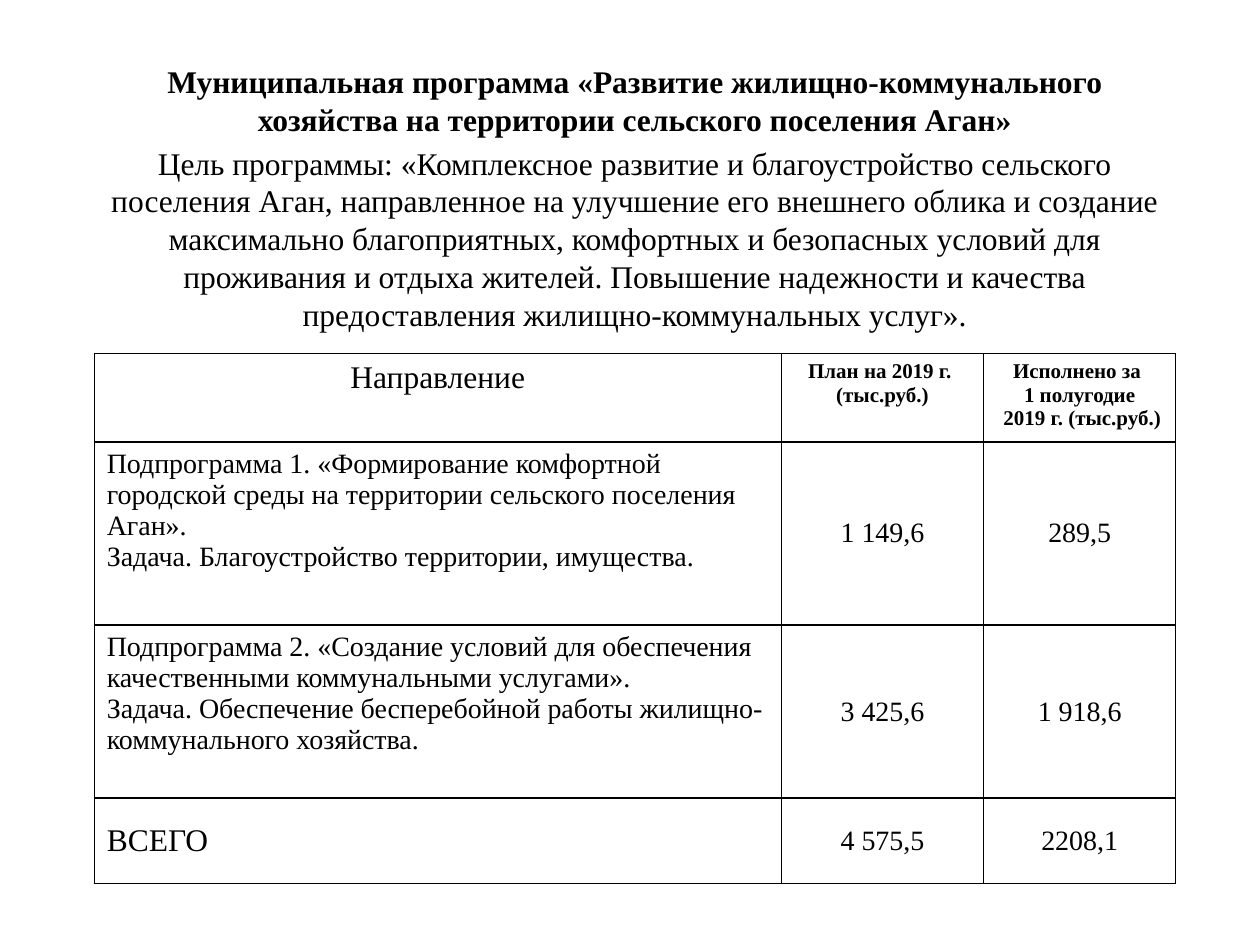
from lxml.etree import fromstring
from pptx import Presentation
from pptx.dml.color import RGBColor
from pptx.enum.text import MSO_ANCHOR, PP_ALIGN
from pptx.oxml.ns import nsdecls
from pptx.util import Cm, Pt

# Content
HEADING = ("Муниципальная программа «Развитие жилищно-коммунального "
           "хозяйства на территории сельского поселения Аган»")
GOAL = ("Цель программы: «Комплексное развитие и благоустройство сельского "
        "поселения Аган, направленное на улучшение его внешнего облика и создание "
        "максимально благоприятных, комфортных и безопасных условий для "
        "проживания и отдыха жителей. Повышение надежности и качества "
        "предоставления жилищно-коммунальных услуг».")
COLUMN_HEADS = [
    ["Направление"],
    ["План на 2019 г. ", "(тыс.руб.)"],
    ["Исполнено за ", "1 полугодие", " 2019 г. (тыс.руб.)"],
]
SUBPROGRAMMES = [
    (["Подпрограмма 1. «Формирование комфортной городской среды на территории "
      "сельского поселения Аган».",
      "Задача. Благоустройство территории, имущества."],
     ["1 149,6"], ["289,5"]),
    (["Подпрограмма 2. «Создание условий для обеспечения качественными "
      "коммунальными услугами».",
      "Задача. Обеспечение бесперебойной работы жилищно-коммунального хозяйства."],
     ["3 425,6"], ["1 918,6"]),
]
TOTAL = (["ВСЕГО"], ["4 575,5"], ["2208,1"])

THEME = {
    "font": "Times New Roman",
    "ink": "000000",
    "large": 18,
    "body": 16,
    "small": 12,
    "border": 1,
}

# Layout, in centimetres
LEFT, WIDTH = 1.9, 21.8
INTRO_TOP, INTRO_HEIGHT = 1.12, 6
TABLE_TOP = 7.13
COLUMN_WIDTHS = [13.85, 4.08, 3.87]
ROW_HEIGHTS = [1.72, 3.69, 3.49, 1.72]


def write(frame, lines, size, bold=False, align=PP_ALIGN.CENTER, before=0, more=False):
    """Write lines as paragraphs; more=True adds them after existing ones."""
    for i, line in enumerate(lines):
        paragraph = frame.add_paragraph() if more or i else frame.paragraphs[0]
        paragraph.alignment = align
        paragraph.space_before = Pt(before)
        run = paragraph.add_run()
        run.text = line
        run.font.name = THEME["font"]
        run.font.size = Pt(size)
        run.font.bold = bold
        run.font.color.rgb = RGBColor.from_string(THEME["ink"])


def outline(cell):
    """Clear the cell's fill and rule all four sides."""
    cell.fill.background()
    for position, side in enumerate("LRTB"):
        cell._tc.get_or_add_tcPr().insert(position, fromstring(
            f'<a:ln{side} {nsdecls("a")} w="{Pt(THEME["border"])}"><a:solidFill>'
            f'<a:srgbClr val="{THEME["ink"]}"/></a:solidFill></a:ln{side}>'))


def cell_format(row, column):
    """Type and alignment by the cell's role in the table."""
    header, label, total = row == 0, column == 0, row == len(ROW_HEIGHTS) - 1
    large = label and (header or total)
    small = header and not label
    return {
        "size": THEME["large" if large else "small" if small else "body"],
        "bold": small,
        "align": PP_ALIGN.LEFT if label and not header else PP_ALIGN.CENTER,
    }


def main():
    prs = Presentation()
    prs.slide_width, prs.slide_height = Cm(25.4), Cm(19.05)
    slide = prs.slides.add_slide(prs.slide_layouts[6])

    # Programme name and goal
    intro = slide.shapes.add_textbox(
        Cm(LEFT), Cm(INTRO_TOP), Cm(WIDTH), Cm(INTRO_HEIGHT)).text_frame
    intro.word_wrap = True
    gap = THEME["large"] * 0.2
    write(intro, [HEADING], THEME["large"], bold=True, before=gap)
    write(intro, [GOAL], THEME["large"], before=gap, more=True)

    # Plan and execution table
    rows = [COLUMN_HEADS, *SUBPROGRAMMES, TOTAL]
    budget = slide.shapes.add_table(
        len(rows), len(COLUMN_WIDTHS), Cm(LEFT), Cm(TABLE_TOP),
        Cm(WIDTH), Cm(sum(ROW_HEIGHTS))).table
    budget.first_row = budget.horz_banding = False
    for column, width in zip(budget.columns, COLUMN_WIDTHS):
        column.width = Cm(width)
    for r, (entries, height) in enumerate(zip(rows, ROW_HEIGHTS)):
        budget.rows[r].height = Cm(height)
        for c, lines in enumerate(entries):
            cell = budget.cell(r, c)
            write(cell.text_frame, lines, **cell_format(r, c))
            at_top = r == 0 or (c == 0 and r < len(rows) - 1)
            cell.vertical_anchor = MSO_ANCHOR.TOP if at_top else MSO_ANCHOR.MIDDLE
            outline(cell)

    prs.save("out.pptx")


if __name__ == "__main__":
    main()
